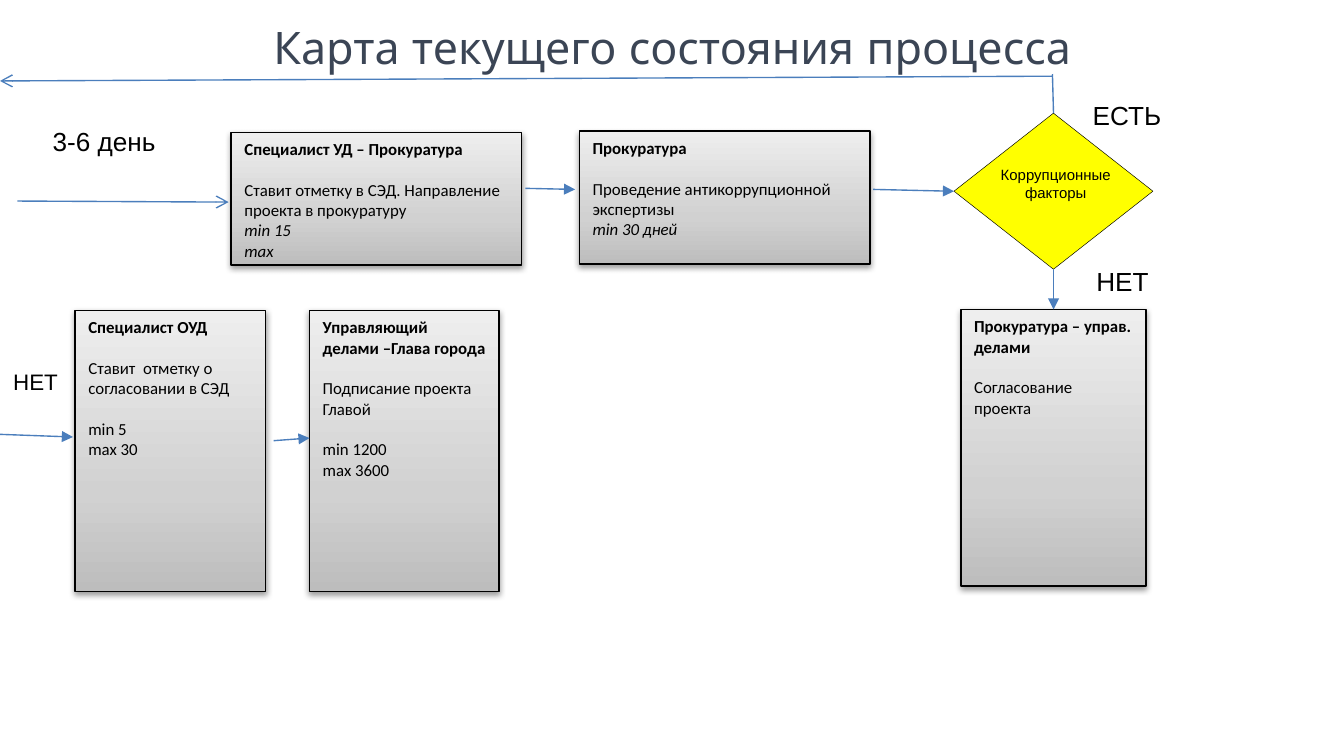
"""Build the slide with the map of the current approval process."""
import copy
import dataclasses
import typing

import lxml.etree
import pptx
import pptx.dml.color
import pptx.enum.dml
import pptx.enum.shapes
import pptx.enum.text
import pptx.oxml.ns
import pptx.util

Cm = pptx.util.Cm
Pt = pptx.util.Pt
qn = pptx.oxml.ns.qn
Kind = pptx.enum.shapes.MSO_SHAPE
Align = pptx.enum.text.PP_ALIGN
GAP = 11
STOPS = ((0, "BDBDBD"), (0.35, "D1D1D1"), (1, "EEEEEE"))


@dataclasses.dataclass
class Step:
    x: float
    y: float
    w: float
    h: float
    head: str
    body: str
    times: tuple = ()
    slant: bool = False


@dataclasses.dataclass
class Label:
    x: float
    y: float
    w: float
    h: float
    text: str
    size: float = 14
    mid: bool = False
    font: str = "Arial"
    tint: str = "000000"
    side: float = 0.25
    top: float = 0.13


@dataclasses.dataclass
class Link:
    x1: float
    y1: float
    x2: float
    y2: float
    tip: str = "triangle"
    start: typing.Any = None
    end: typing.Any = None


STEPS = {
    "sign": Step(5.85, 5.87, 3.58, 5.31, "Управляющий делами –Глава города",
                 "Подписание проекта Главой", ("min 1200", "max 3600")),
    "mark": Step(1.42, 5.87, 3.6, 5.31, "Специалист ОУД",
                 "Ставит  отметку о согласовании в СЭД", ("min 5", "max 30")),
    "agree": Step(18.16, 5.85, 3.5, 5.23, "Прокуратура – управ. делами",
                  "Согласование проекта"),
    "send": Step(4.37, 2.5, 5.49, 2.51, "Специалист УД – Прокуратура",
                 "Ставит отметку в СЭД. Направление проекта в прокуратуру",
                 ("min 15", "max"), True),
    "check": Step(10.95, 2.48, 5.49, 2.51, "Прокуратура",
                  "Проведение антикоррупционной экспертизы", ("min 30 дней",), True),
}
LABELS = (
    Label(1.68, 0.28, 22.05, 1.98, "Карта текущего состояния процесса", 24, True,
          "Quicksand", "3B4555", 0.18, 0.1),
    Label(0, 2.24, 3.94, 0.86, "3-6 день", mid=True),
    Label(0, 6.83, 1.42, 0.76, "НЕТ", 12),
    Label(20.47, 4.88, 1.7, 0.86, "НЕТ"),
    Label(18.34, 3, 3.23, 0.94, "Коррупционные факторы", 8, True),
    Label(20.4, 1.75, 3.51, 0.86, "ЕСТЬ"),
)


def rgb(code: str) -> pptx.dml.color.RGBColor:
    return pptx.dml.color.RGBColor.from_string(code)


def write(frame, text: str, *, size=9, font="Calibri", tint="000000", bold=False,
          slant=False, mid=False, gap=0) -> None:
    para = frame.paragraphs[0]
    if para.runs:
        para = frame.add_paragraph()
    para.alignment = Align.CENTER if mid else Align.LEFT
    para.space_before = Pt(gap)
    run = para.add_run()
    run.text = text
    face = run.font
    face.size, face.name, face.bold, face.italic = Pt(size), font, bold, slant
    face.color.rgb = rgb(tint)


def edge(line, tint: str, width: float) -> None:
    line.color.rgb = rgb(tint)
    line.width = Pt(width)


def shade(shape) -> None:
    fill = shape.fill
    fill.gradient()
    fill.gradient_angle = 90
    stops = shape._element.spPr.find(qn("a:gradFill")).find(qn("a:gsLst"))
    stops.append(copy.deepcopy(stops[0]))
    for stop, (spot, tint) in zip(fill.gradient_stops, STOPS):
        stop.position = spot
        stop.color.rgb = rgb(tint)
    shape.shadow.inherit = False
    glow = lxml.etree.SubElement(
        shape._element.spPr.find(qn("a:effectLst")), qn("a:outerShdw"),
        blurRad="40000", dist="20000", dir="5400000", rotWithShape="0")
    hue = lxml.etree.SubElement(glow, qn("a:srgbClr"), val="000000")
    lxml.etree.SubElement(hue, qn("a:alpha"), val="38000")


def draw_step(slide, step: Step):
    shape = slide.shapes.add_shape(Kind.FLOWCHART_PROCESS, Cm(step.x), Cm(step.y),
                                   Cm(step.w), Cm(step.h))
    shade(shape)
    edge(shape.line, "000000", 0.75)
    frame = shape.text_frame
    frame.word_wrap = True
    frame.vertical_anchor = pptx.enum.text.MSO_ANCHOR.TOP
    write(frame, step.head, bold=True)
    write(frame, step.body, gap=GAP)
    for i, time in enumerate(step.times):
        write(frame, time, slant=step.slant, gap=0 if i or step.slant else GAP)
    return shape


def draw_choice(slide):
    shape = slide.shapes.add_shape(Kind.DIAMOND, Cm(18.03), Cm(2.14), Cm(3.76), Cm(2.95))
    shape.shadow.inherit = False
    shape.fill.solid()
    shape.fill.fore_color.rgb = rgb("FFFF00")
    edge(shape.line, "000000", 0.25)
    return shape


def draw_label(slide, label: Label) -> None:
    box = slide.shapes.add_textbox(Cm(label.x), Cm(label.y), Cm(label.w), Cm(label.h))
    frame = box.text_frame
    frame.word_wrap = True
    frame.margin_left = frame.margin_right = Cm(label.side)
    frame.margin_top = frame.margin_bottom = Cm(label.top)
    write(frame, label.text, size=label.size, font=label.font, tint=label.tint,
          mid=label.mid)


def draw_link(slide, link: Link) -> None:
    line = slide.shapes.add_connector(
        pptx.enum.shapes.MSO_CONNECTOR.STRAIGHT,
        Cm(link.x1), Cm(link.y1), Cm(link.x2), Cm(link.y2))
    if link.start:
        line.begin_connect(*link.start)
    if link.end:
        line.end_connect(*link.end)
    edge(line.line, "4B7EBC", 0.75)
    props = line._element.spPr
    if link.tip:
        lxml.etree.SubElement(props.find(qn("a:ln")), qn("a:tailEnd"), type=link.tip)
    lxml.etree.SubElement(props, qn("a:effectLst"))


def main() -> None:
    deck = pptx.Presentation()
    deck.slide_width, deck.slide_height = Cm(25.4), Cm(14.29)
    slide = deck.slides.add_slide(deck.slide_layouts[6])
    steps = {name: draw_step(slide, step) for name, step in STEPS.items()}
    choice = draw_choice(slide)
    links = (
        Link(5.17, 8.33, 5.85, 8.28),
        Link(19.91, 5.09, 19.91, 5.85, start=(choice, 2), end=(steps["agree"], 0)),
        Link(19.89, 1.4, 19.91, 2.14, tip="", end=(choice, 0)),
        Link(0, 8.21, 1.38, 8.26),
        Link(0.33, 3.8, 4.32, 3.82, tip="arrow"),
        Link(9.93, 3.56, 10.87, 3.58),
        Link(16.5, 3.58, 18.03, 3.61, end=(choice, 1)),
        Link(19.89, 1.44, 0, 1.53, tip="arrow"),
    )
    for link in links:
        draw_link(slide, link)
    for label in LABELS:
        draw_label(slide, label)
    deck.save("out.pptx")


if __name__ == "__main__":
    main()
